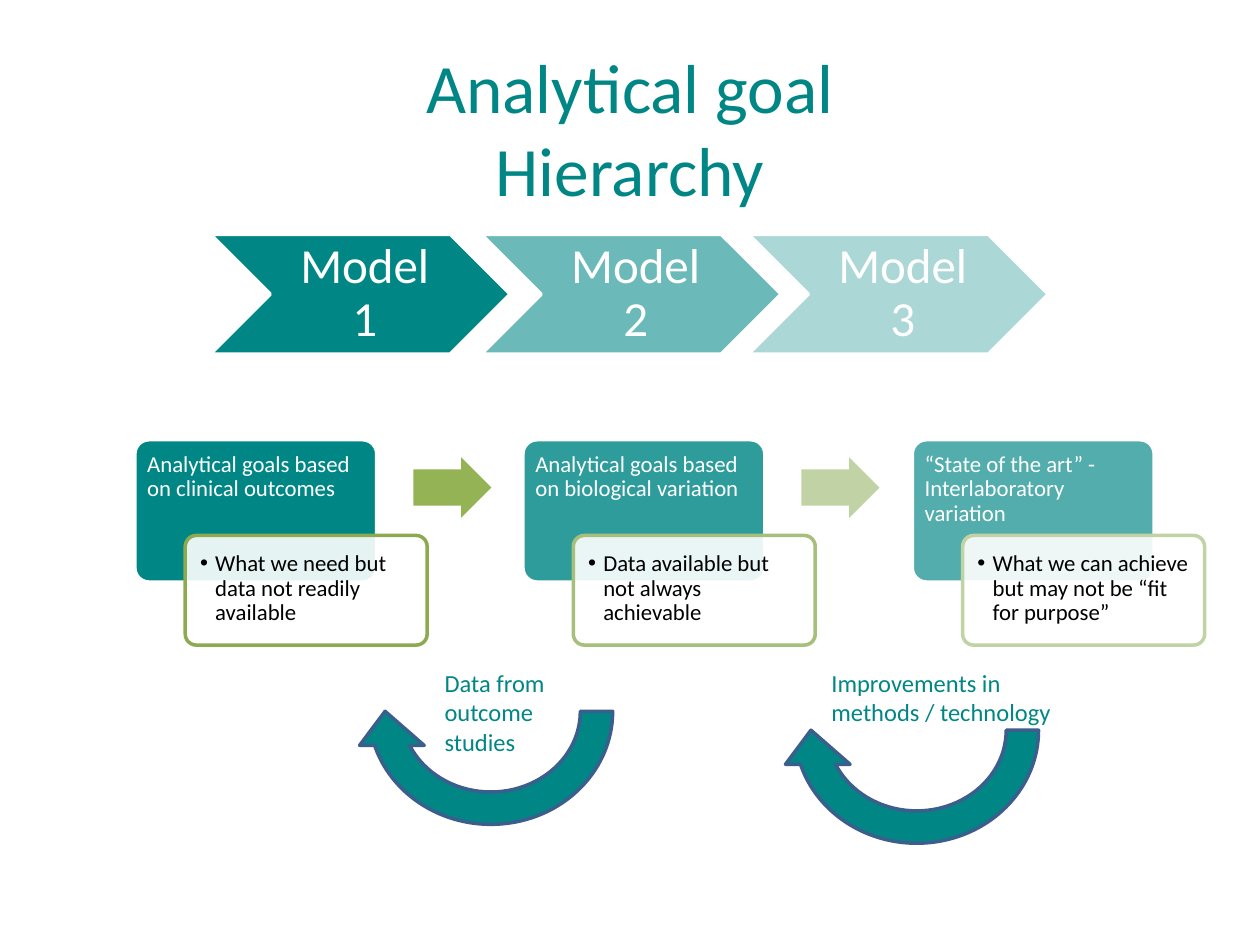
from lxml import etree
from pptx import Presentation
from pptx.dml.color import RGBColor
from pptx.enum.shapes import MSO_SHAPE
from pptx.enum.text import MSO_ANCHOR, PP_ALIGN
from pptx.oxml.ns import qn
from pptx.util import Pt

PX = 9144
FONT = "Calibri"
TEAL = RGBColor(0x00, 0x87, 0x85)
WHITE = RGBColor(0xFF, 0xFF, 0xFF)
BLACK = RGBColor(0x00, 0x00, 0x00)
NAVY = RGBColor(0x3A, 0x5F, 0x8C)
GREEN = RGBColor(0x94, 0xB3, 0x55)
PALE = RGBColor(0xC1, 0xD3, 0xA4)
EDGES = (RGBColor(0x8D, 0xAA, 0x51), RGBColor(0xA6, 0xBF, 0x7A),
         RGBColor(0xC1, 0xD3, 0xA5))

ROUND = MSO_SHAPE.ROUNDED_RECTANGLE
RIGHT = MSO_SHAPE.RIGHT_ARROW
CURVE = MSO_SHAPE.CIRCULAR_ARROW
CHEVRON = MSO_SHAPE.CHEVRON
TOP = MSO_ANCHOR.TOP
MIDDLE = MSO_ANCHOR.MIDDLE
LEFT = PP_ALIGN.LEFT
CENTER = PP_ALIGN.CENTER


def scale(box):
    return [n * PX for n in box]


def add_form(slide, kind, box, fill, line=None, alpha=100, adj=()):
    form = slide.shapes.add_shape(kind, *scale(box))
    form.shadow.inherit = False
    form.fill.solid()
    form.fill.fore_color.rgb = fill
    if alpha < 100:
        tone = form._element.spPr.find(qn("a:solidFill"))[0]
        etree.SubElement(tone, qn("a:alpha"), val=str(alpha * 1000))
    if line is None:
        form.line.fill.background()
    else:
        form.line.color.rgb = line
        form.line.width = Pt(2)
    for i, part in enumerate(adj):
        form.adjustments[i] = part
    return form


def add_text(slide, box, lines, size, color, pad=(10, 5, 10, 5),
             align=LEFT, anchor=TOP, space=None):
    frame = slide.shapes.add_textbox(*scale(box)).text_frame
    frame.word_wrap = True
    frame.vertical_anchor = anchor
    (frame.margin_left, frame.margin_top,
     frame.margin_right, frame.margin_bottom) = scale(pad)
    para = frame.paragraphs[0]
    para.alignment = align
    if space:
        para.line_spacing = space
    for i, line in enumerate(lines):
        if i:
            para.add_line_break()
        run = para.add_run()
        run.text = line
        run.font.name = FONT
        run.font.size = Pt(size)
        run.font.color.rgb = color
    return para


def add_bullet(para, gap):
    props = para._p.get_or_add_pPr()
    props.set("marL", str(gap * PX))
    props.set("indent", str(-gap * PX))
    etree.SubElement(props, qn("a:buFont"), typeface="Arial")
    etree.SubElement(props, qn("a:buChar"), char="•")


def add_title(slide, box):
    add_text(slide, box, ("Analytical goal", "Hierarchy"), 39.6, TEAL,
             (10, 5, 10, 53), CENTER, MIDDLE)


def add_card(slide, box, head, note, alpha, edge):
    x, y, w, h = box
    add_form(slide, ROUND, box, TEAL, WHITE, alpha, (0.1,))
    add_text(slide, (x, y, w, 76), (head,), 13, WHITE,
             (10, 10, 10, 5), space=0.9)
    add_form(slide, ROUND, (x + 40, y + 76, w, 87), WHITE, edge, 90, (0.1,))
    para = add_text(slide, (x + 42, y + 79, w - 5, 82), (note,), 13, BLACK,
                    (10, 10, 10, 10), space=0.9)
    add_bullet(para, 12)


def add_cards(slide, left, top):
    cards = (
        ("Analytical goals based on clinical outcomes",
         "What we need but data not readily available", 100, GREEN),
        ("Analytical goals based on biological variation",
         "Data available but not always achievable", 82, PALE),
        ("“State of the art” - Interlaboratory variation",
         "What we can achieve but may not be “fit for purpose”", 68, None),
    )
    for i, (head, note, alpha, next_fill) in enumerate(cards):
        x = left + i * 617 // 2
        add_card(slide, (x, top, 192, 113), head, note, alpha, EDGES[i])
        if next_fill is not None:
            add_form(slide, RIGHT, (x + 221, top + 14, 62, 48), next_fill,
                     adj=(0.6, 0.5))


def add_loop(slide, box, label, spot):
    x, y, w, h = box
    add_form(slide, CURVE, box, TEAL, NAVY).rotation = 180
    dx, dy, tw, th = spot
    add_text(slide, (x + dx, y + dy, tw, th), (label,), 14, TEAL)


def add_model(slide, box, label, alpha):
    x, y, w, h = box
    add_form(slide, CHEVRON, box, TEAL, WHITE, alpha)
    add_text(slide, (x + 47, y, 143, h), (label,), 28, WHITE,
             (12, 4, 4, 4), CENTER, MIDDLE, 0.9)


def main():
    deck = Presentation()
    deck.slide_width, deck.slide_height = scale((1000, 750))
    slide = deck.slides.add_slide(deck.slide_layouts[6])
    add_title(slide, (75, 54, 850, 142))
    add_cards(slide, 107, 349)
    add_loop(slide, (618, 477, 219, 205),
             "Improvements in methods / technology", (32, 48, 220, 57))
    add_loop(slide, (280, 462, 219, 205),
             "Data from outcome studies", (63, 63, 150, 81))
    models = ((167, 100), (382, 58), (594, 33))
    for i, (x, alpha) in enumerate(models, 1):
        add_model(slide, (x, 186, 238, 95), f"Model {i}", alpha)
    deck.save("out.pptx")


if __name__ == "__main__":
    main()
